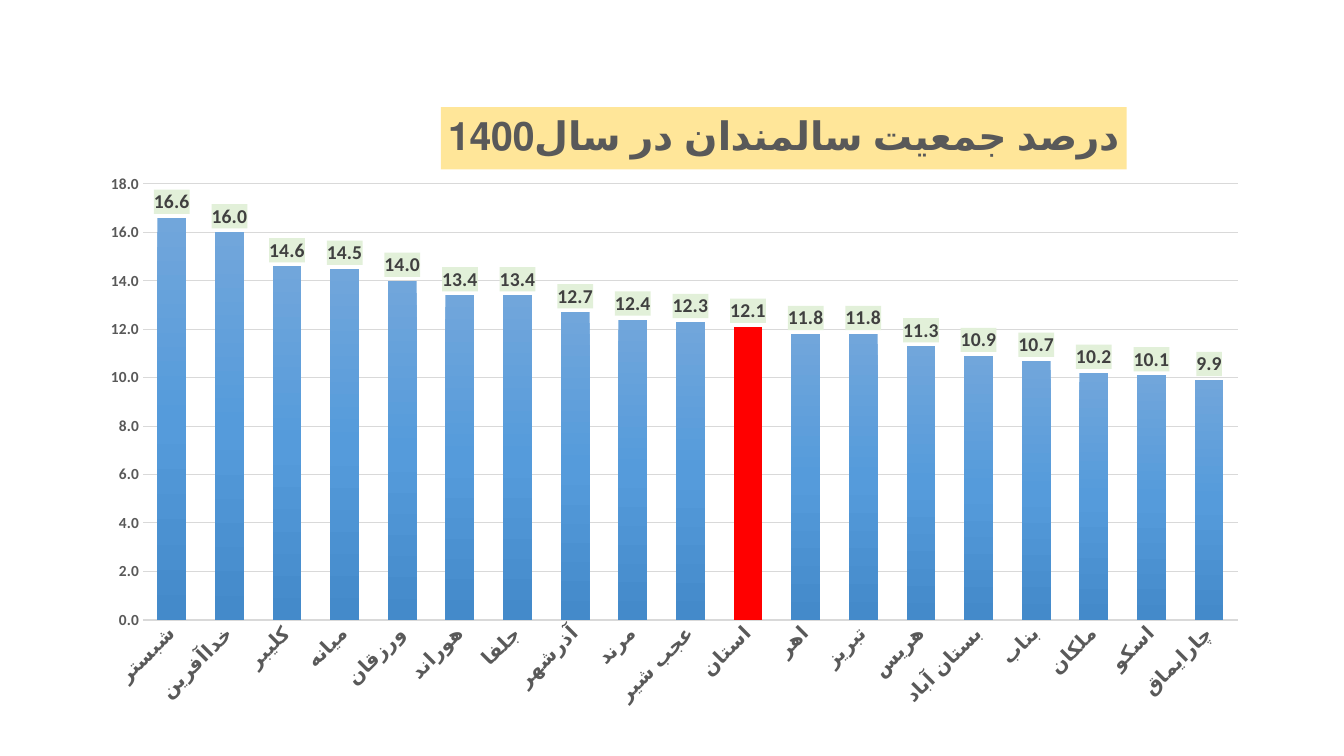
from copy import deepcopy
from lxml.etree import SubElement as Sub
from pptx import Presentation
from pptx.chart.data import CategoryChartData as Data
from pptx.dml.color import RGBColor as Rgb
from pptx.enum.chart import XL_CHART_TYPE as Kind, XL_LABEL_POSITION as Pos
from pptx.enum.chart import XL_TICK_MARK as Tick
from pptx.oxml import parse_xml
from pptx.oxml.ns import nsdecls, qn
from pptx.util import Emu, Pt

TITLE = "درصد جمعیت سالمندان در سال1400"
SHARES = [
    ("شبستر", 16.6), ("خداآفرین", 16), ("کلیبر", 14.6), ("میانه", 14.5),
    ("ورزقان", 14), ("هوراند", 13.4), ("جلفا", 13.4), ("آذرشهر", 12.7),
    ("مرند", 12.4), ("عجب شیر", 12.3), ("استان", 12.1), ("اهر", 11.8),
    ("تبریز", 11.8), ("هریس", 11.3), ("بستان آباد", 10.9), ("بناب", 10.7),
    ("ملکان", 10.2), ("اسکو", 10.1), ("چارایماق", 9.9),
]
PROVINCE = "استان"
SHADES = [(0, "71A6DB"), (0.5, "559BDB"), (1, "448ACA")]
GRAY, RULE = "595959", "D9D9D9"

# left, top, width, height in px
FRAME = (87, 82, 1174, 639)
PLOT = (143, 184, 1095, 436)
HEAD = (441, 107)
PX = 914400 / 100.8


def emu(px):
    return Emu(round(px * PX))


def paint(fill, color):
    fill.solid()
    fill.fore_color.rgb = Rgb.from_string(color)


def style(font, size, color):
    font.size, font.bold, font.name = Pt(size), True, "Calibri"
    font.color.rgb = Rgb.from_string(color)


def place(node, index, box, inner=False):
    """Give a chart part a fixed place, as shares of the chart frame."""
    for old in node.findall(qn("c:layout")):
        node.remove(old)
    layout = parse_xml(f"<c:layout {nsdecls('c')}/>")
    node.insert(index, layout)
    manual = Sub(layout, qn("c:manualLayout"))
    if inner:
        Sub(manual, qn("c:layoutTarget"), val="inner")
    for axis in "xy":
        Sub(manual, qn(f"c:{axis}Mode"), val="edge")
    left, top, wide, high = FRAME
    start = (left, top, 0, 0)
    for key, value, base, span in zip("xywh", box, start, (wide, high) * 2):
        Sub(manual, qn(f"c:{key}"), val=f"{(value - base) / span:.4f}")


def shade(fill, node):
    """Fill with the three shades, light at the top."""
    fill.gradient()
    fill.gradient_angle = 270
    stops = next(node.iter(qn("a:gsLst")))
    stops.append(deepcopy(stops[-1]))
    for stop, (at, color) in zip(fill.gradient_stops, SHADES):
        stop.position = at
        stop.color.rgb = Rgb.from_string(color)


def set_axes(chart):
    cat, val = chart.category_axis, chart.value_axis
    for axis, size in ((cat, 14), (val, 11)):
        axis.major_tick_mark = axis.minor_tick_mark = Tick.NONE
        style(axis.tick_labels.font, size, GRAY)
    cat.format.line.width = Pt(1)
    cat.format.line.color.rgb = Rgb.from_string(RULE)
    cat._element.find(qn("c:txPr")).find(qn("a:bodyPr")).set("rot", "-2700000")
    val.minimum_scale, val.maximum_scale, val.major_unit = 0, 18, 2
    val.format.line.fill.background()
    val.has_major_gridlines = True
    grid = val.major_gridlines.format.line
    grid.width = Pt(0.75)
    grid.color.rgb = Rgb.from_string(RULE)
    val.tick_labels.number_format = "0.0"
    val.tick_labels.number_format_is_linked = False


def set_bars(plot):
    plot.gap_width, plot.overlap, plot.vary_by_categories = 100, -24, False
    bars = plot.series[0]
    shade(bars.format.fill, bars._element)
    names = [name for name, _ in SHARES]
    paint(bars.points[names.index(PROVINCE)].format.fill, "FF0000")
    labels = bars.data_labels
    labels.show_value, labels.position = True, Pos.OUTSIDE_END
    labels.number_format, labels.number_format_is_linked = "0.0", False
    style(labels.font, 14, "404040")
    back = parse_xml(
        f'<c:spPr {nsdecls("c", "a")}><a:solidFill>'
        '<a:srgbClr val="E2F0D9"/></a:solidFill></c:spPr>')
    labels._element.find(qn("c:txPr")).addprevious(back)


def set_title(chart):
    title = chart.chart_title
    para = title.text_frame.paragraphs[0]
    para.text = TITLE
    style(para.font, 28, GRAY)
    paint(title.format.fill, "FFE699")
    place(title._element, 1, HEAD)


def main():
    deck = Presentation()
    deck.slide_width, deck.slide_height = emu(1344), emu(756)
    slide = deck.slides.add_slide(deck.slide_layouts[6])
    data = Data(number_format="0.0")
    data.categories = [name for name, _ in SHARES]
    data.add_series("Series 1", [share for _, share in SHARES])
    chart = slide.shapes.add_chart(
        Kind.COLUMN_CLUSTERED, *map(emu, FRAME), data).chart
    chart.font.name, chart.font.size = "Calibri", Pt(10)
    chart.has_legend = False
    set_title(chart)
    set_axes(chart)
    set_bars(chart.plots[0])
    place(next(chart._chartSpace.iter(qn("c:plotArea"))), 0, PLOT, True)
    deck.save("out.pptx")


if __name__ == "__main__":
    main()
